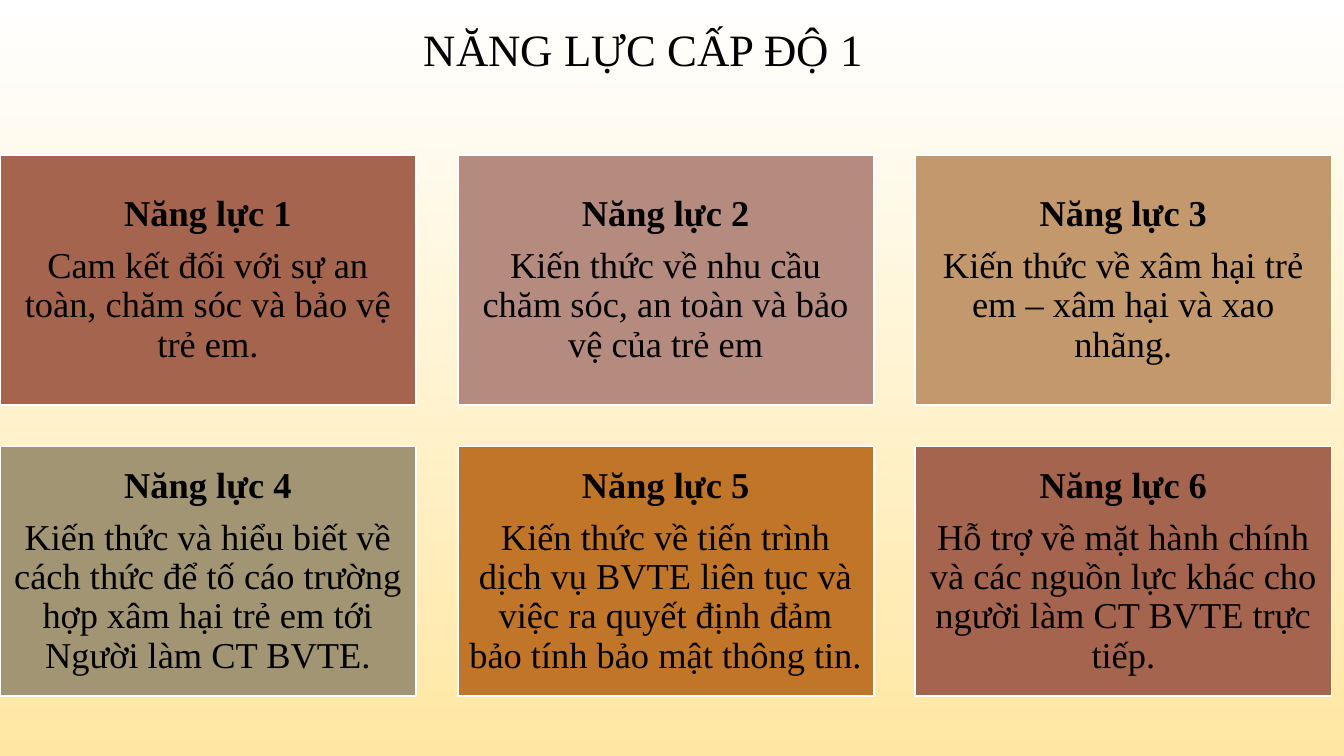
from dataclasses import dataclass

from pptx import Presentation
from pptx.dml.color import RGBColor
from pptx.enum.shapes import MSO_SHAPE
from pptx.enum.text import MSO_ANCHOR, PP_ALIGN
from pptx.util import Pt

RECTANGLE = MSO_SHAPE.RECTANGLE
MIDDLE = MSO_ANCHOR.MIDDLE
CENTER = PP_ALIGN.CENTER


@dataclass(frozen=True)
class Theme:
    font: str = "Times New Roman"
    title_size: float = 32
    card_size: float = 26
    text: str = "000000"
    border: str = "FFFFFF"
    background_top: str = "FFFFFF"
    background_bottom: str = "FFE7A3"
    card_fills: tuple = ("A5644E", "B58B80", "C3986D", "A19574", "C17529")


THEME = Theme()

# Card grid: height and gap follow from the width
COLUMNS = 3
GRID_TOP = 110.9
CARD_WIDTH = 297.2
CARD_HEIGHT = 0.6 * CARD_WIDTH
CARD_GAP = 0.1 * CARD_WIDTH
CARD_INSET = 7.8

COMPETENCIES = (
    "Cam kết đối với sự an toàn, chăm sóc và bảo vệ trẻ em.",
    "Kiến thức về nhu cầu chăm sóc, an toàn và bảo vệ của trẻ em",
    "Kiến thức về xâm hại trẻ em – xâm hại và xao nhãng.",
    "Kiến thức và hiểu biết về cách thức để tố cáo trường hợp xâm hại trẻ em tới Người làm CT BVTE.",
    "Kiến thức về tiến trình dịch vụ BVTE liên tục và việc ra quyết định đảm bảo tính bảo mật thông tin.",
    "Hỗ trợ về mặt hành chính và các nguồn lực khác cho người làm CT BVTE trực tiếp.",
)


def rgb(value):
    return RGBColor.from_string(value)


def paint_background(slide):
    fill = slide.background.fill
    fill.gradient()
    fill.gradient_angle = 270
    colors = (THEME.background_top, THEME.background_bottom)
    for stop, color in zip(fill.gradient_stops, colors):
        stop.color.rgb = rgb(color)


def write_line(paragraph, text, size, bold=False):
    paragraph.alignment = CENTER
    paragraph.line_spacing = 0.9
    run = paragraph.add_run()
    run.text = text
    run.font.name = THEME.font
    run.font.size = Pt(size)
    run.font.bold = bold
    run.font.color.rgb = rgb(THEME.text)


def add_title(slide, text):
    title = slide.shapes.add_textbox(Pt(55.4), Pt(10.8), Pt(808.6), Pt(53.3))
    frame = title.text_frame
    frame.word_wrap = True
    frame.vertical_anchor = MIDDLE
    write_line(frame.paragraphs[0], text, THEME.title_size)


def add_card(slide, index, description):
    row, column = divmod(index, COLUMNS)
    card = slide.shapes.add_shape(
        RECTANGLE,
        Pt(column * (CARD_WIDTH + CARD_GAP)),
        Pt(GRID_TOP + row * (CARD_HEIGHT + CARD_GAP)),
        Pt(CARD_WIDTH),
        Pt(CARD_HEIGHT),
    )
    card.shadow.inherit = False
    card.fill.solid()
    card.fill.fore_color.rgb = rgb(THEME.card_fills[index % len(THEME.card_fills)])
    card.line.color.rgb = rgb(THEME.border)
    card.line.width = Pt(1.25)

    frame = card.text_frame
    frame.word_wrap = True
    frame.vertical_anchor = MIDDLE
    frame.margin_left = frame.margin_right = Pt(CARD_INSET)
    frame.margin_top = frame.margin_bottom = Pt(CARD_INSET)
    heading = frame.paragraphs[0]
    write_line(heading, f"Năng lực {index + 1}", THEME.card_size, bold=True)
    heading.space_after = Pt(0.35 * THEME.card_size)
    write_line(frame.add_paragraph(), description, THEME.card_size)


def main():
    deck = Presentation()
    deck.slide_width, deck.slide_height = Pt(960), Pt(540)
    slide = deck.slides.add_slide(deck.slide_layouts[6])

    # Background and title
    paint_background(slide)
    add_title(slide, "NĂNG LỰC CẤP ĐỘ 1")

    # Competency cards
    for index, description in enumerate(COMPETENCIES):
        add_card(slide, index, description)

    deck.save("out.pptx")


if __name__ == "__main__":
    main()
